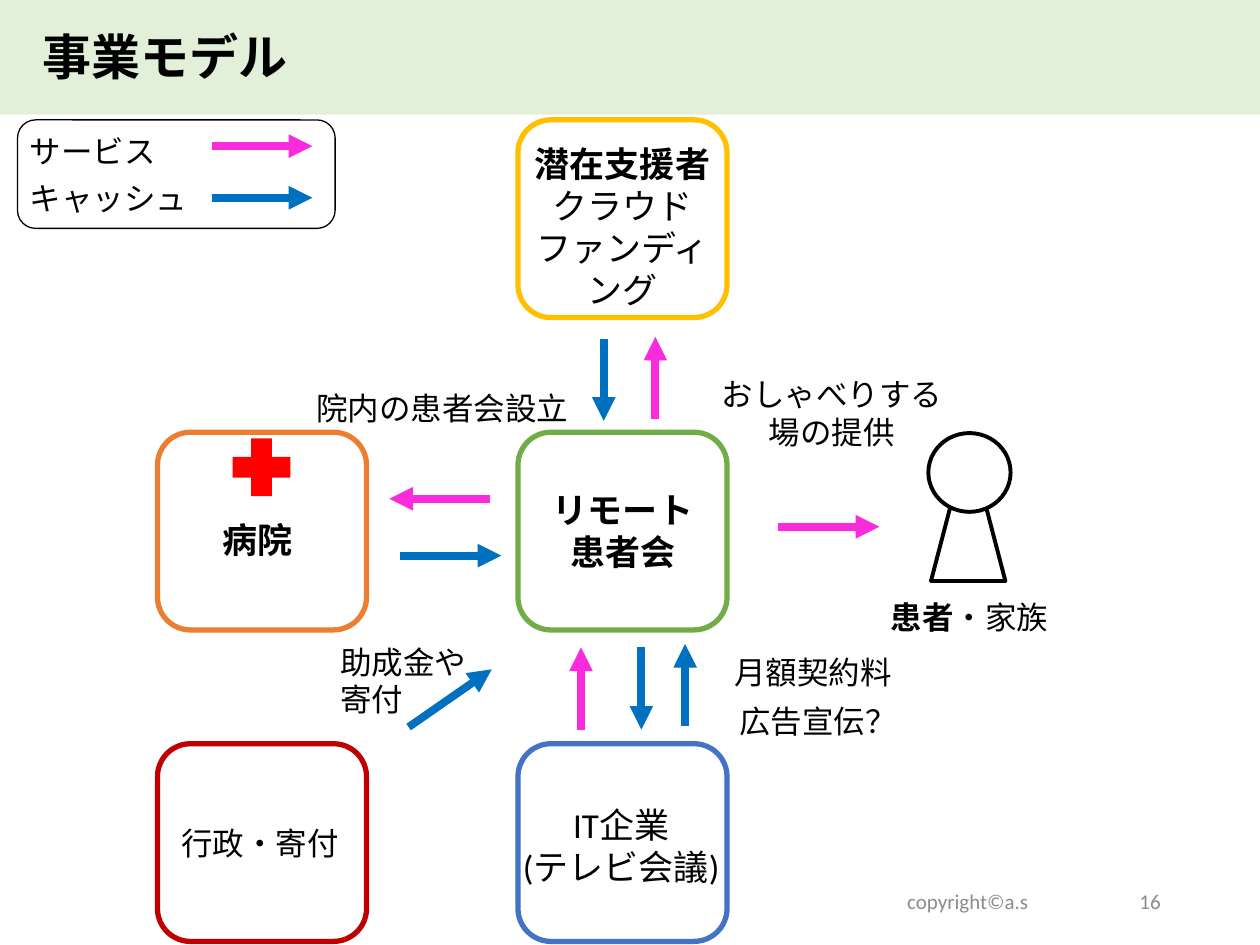
from lxml import etree
from pptx import Presentation
from pptx.dml.color import RGBColor
from pptx.enum import shapes, text
from pptx.oxml import ns
from pptx.util import Pt

COLORS = {
    "black": "000000", "white": "FFFFFF", "gray": "8C8C8C", "band": "E2F0D9",
    "service": "F92BDC", "cash": "0070C0", "cross": "FF0000",
    "group": "70AD47", "supporter": "FFC000", "company": "4472C4",
    "hospital": "ED7D31", "government": "C00000",
}
FONT = "Calibri"
LEFT, CENTER, RIGHT = text.PP_ALIGN.LEFT, text.PP_ALIGN.CENTER, text.PP_ALIGN.RIGHT
BOX_WIDTH, BOX_HEIGHT = 119.5, 113
COLUMNS = (90, 296)
ROWS = (68.5, 247, 425)


def color(name):
    return RGBColor.from_string(COLORS[name])


def add_shape(slide, kind, left, top, width, height, fill=None, line=None, weight=1):
    shape = slide.shapes.add_shape(kind, Pt(left), Pt(top), Pt(width), Pt(height))
    shape.shadow.inherit = False
    if fill:
        shape.fill.solid()
        shape.fill.fore_color.rgb = color(fill)
    else:
        shape.fill.background()
    if line:
        shape.line.color.rgb = color(line)
        shape.line.width = Pt(weight)
    else:
        shape.line.fill.background()
    return shape


def add_box(slide, column, row, line):
    add_shape(slide, shapes.MSO_SHAPE.ROUNDED_RECTANGLE, COLUMNS[column], ROWS[row],
              BOX_WIDTH, BOX_HEIGHT, line=line, weight=3)


def add_text(slide, left, top, width, height, paragraphs, size=18, bold=False,
             align=LEFT, ink="black", anchor=text.MSO_ANCHOR.TOP):
    """Each paragraph is a list of runs; with bold, only its first run is bold."""
    box = slide.shapes.add_textbox(Pt(left), Pt(top), Pt(width), Pt(height))
    frame = box.text_frame
    frame.word_wrap = True
    frame.vertical_anchor = anchor
    for index, runs in enumerate(paragraphs):
        paragraph = frame.add_paragraph() if index else frame.paragraphs[0]
        paragraph.alignment = align
        paragraph.font.name = FONT
        paragraph.font.size = Pt(size)
        paragraph.font.color.rgb = color(ink)
        for position, words in enumerate(runs):
            run = paragraph.add_run()
            run.text = words
            run.font.name = FONT
            run.font.size = Pt(size)
            run.font.bold = bold and position == 0
            run.font.color.rgb = color(ink)


def add_arrow(slide, flow, start_x, start_y, end_x, end_y):
    arrow = slide.shapes.add_connector(
        shapes.MSO_CONNECTOR.STRAIGHT, Pt(start_x), Pt(start_y), Pt(end_x), Pt(end_y))
    arrow.line.color.rgb = color(flow)
    arrow.line.width = Pt(4.5)
    etree.SubElement(arrow.line._get_or_add_ln(), ns.qn("a:tailEnd"), type="triangle")
    etree.SubElement(arrow._element.spPr, ns.qn("a:effectLst"))


def add_patient(slide):
    for kind, *place in (
        (shapes.MSO_SHAPE.ISOSCELES_TRIANGLE, 532, 250.5, 42.5, 81.5),
        (shapes.MSO_SHAPE.OVAL, 530.5, 247.5, 47, 45),
    ):
        add_shape(slide, kind, *place, fill="white", line="black", weight=2.25)


def main():
    presentation = Presentation()
    presentation.slide_width, presentation.slide_height = Pt(720), Pt(540)
    slide = presentation.slides.add_slide(presentation.slide_layouts[6])

    # Title band
    add_shape(slide, shapes.MSO_SHAPE.RECTANGLE, 0, 0, 720, 65.5, fill="band")
    add_text(slide, 17.5, 11.5, 158.5, 41, [["事業モデル"]], size=28, bold=True)

    # Parties
    for column, row, line in (
        (1, 0, "supporter"), (0, 1, "hospital"), (1, 1, "group"),
        (0, 2, "government"), (1, 2, "company"),
    ):
        add_box(slide, column, row, line)
    add_text(slide, COLUMNS[1], 77.8, BOX_WIDTH, 104.5,
             [["潜在支援者", "クラウドファンディング"]], size=20, bold=True, align=CENTER)
    add_text(slide, 301, 275.8, 110, 55.5, [["リモート患者会"]],
             size=20, bold=True, align=CENTER)
    add_text(slide, 290, 455.8, 130, 55.5, [["IT企業"], ["(テレビ会議)"]],
             size=20, align=CENTER)
    add_text(slide, 120.2, 293, 58.5, 31.5, [["病院"]], size=20, bold=True)
    add_text(slide, 96.5, 467.3, 106, 29, [["行政・寄付"]])
    add_text(slide, 501.8, 338.4, 107, 29, [["患者", "・家族"]], bold=True)
    add_patient(slide)
    cross = add_shape(slide, shapes.MSO_SHAPE.CROSS, 133, 250.5, 33, 33, fill="cross")
    cross.adjustments[0] = 0.32

    # Legend
    add_shape(slide, shapes.MSO_SHAPE.ROUNDED_RECTANGLE, 10, 68.5, 181.5, 62,
              line="black", weight=0.75)
    for label, flow, label_top, arrow_y in (
        ("サービス", "service", 72, 83.5), ("キャッシュ", "cash", 98.6, 113),
    ):
        add_text(slide, 10, label_top, 111, 29, [[label]])
        add_arrow(slide, flow, 121, arrow_y, 178.5, arrow_y)

    # Flows between the parties
    for flow in (
        ("cash", 345, 193.5, 345, 240.5),
        ("service", 374.5, 239.5, 374.5, 192.5),
        ("service", 444.5, 301, 502.5, 301),
        ("service", 280, 285, 222.5, 285),
        ("cash", 228.5, 317.5, 286.5, 317.5),
        ("cash", 233.5, 415.5, 281, 382.5),
        ("service", 332, 417, 332, 370),
        ("cash", 366.5, 370, 366.5, 417),
        ("cash", 391.5, 415, 391.5, 368),
    ):
        add_arrow(slide, *flow)

    # Flow captions
    for left, top, width, height, words, align in (
        (173.5, 218.9, 161.5, 29, "院内の患者会設立", LEFT),
        (401.8, 211, 147, 51, "おしゃべりする場の提供", CENTER),
        (187.2, 363.6, 89.5, 51, "助成金や寄付", LEFT),
        (412.5, 369.4, 114, 29, "月額契約料", LEFT),
        (415.4, 397.4, 114, 29, "広告宣伝？", LEFT),
    ):
        add_text(slide, left, top, width, height, [[words]], align=align)

    # Footer
    for left, width, words, align in (
        (431.3, 243.4, "copyright©a.s", CENTER), (508.3, 162, "16", RIGHT),
    ):
        add_text(slide, left, 500.5, width, 29, [[words]], size=12, align=align,
                 ink="gray", anchor=text.MSO_ANCHOR.MIDDLE)

    presentation.save("out.pptx")


if __name__ == "__main__":
    main()
